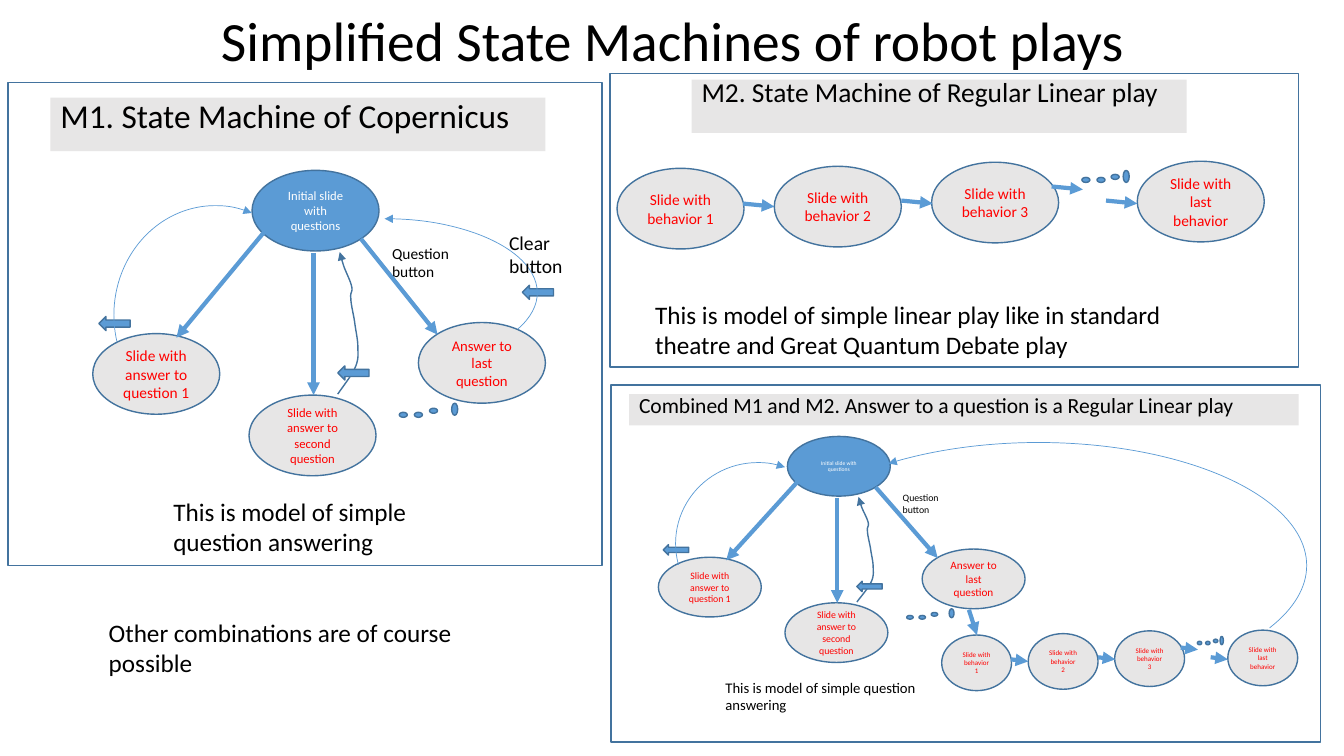
from collections import namedtuple
from dataclasses import dataclass

from pptx import Presentation
from pptx.dml.color import RGBColor
from pptx.enum import shapes, text
from pptx.oxml import parse_xml
from pptx.oxml.ns import nsdecls, qn
from pptx.util import Inches, Pt


@dataclass
class Theme:
    font: str = "Calibri"
    blue: str = "5B9BD5"
    edge: str = "43739E"
    gray: str = "E7E6E6"
    red: str = "FF0000"
    white: str = "FFFFFF"
    black: str = "000000"
    title: float = 39.6
    heads: tuple = (23.8, 19.6, 15.4)
    note: float = 18
    clear: float = 14
    big_star: tuple = (9, 11, 9, 10.5, 11, 18)
    small_star: tuple = (4, 7, 7, 8, 7, 10.5)
    big_play: float = 11
    small_play: float = 5


# A view moves point (x0, y0) to (x, y) and scales about it.
View = namedtuple("View", "x0 y0 x y kx ky")
PAGE = View(0, 0, 0, 0, 1, 1)
STAR = View(2.5, 1.69, 7.81, 4.33, 0.81, 0.74)
PLAY = View(6.12, 1.67, 9.34, 6.3, 0.55, 0.69)
KIND = shapes.MSO_SHAPE
ANCHOR = text.MSO_ANCHOR
theme = Theme()

prs = Presentation()
prs.slide_width, prs.slide_height = Inches(13.33), Inches(7.5)
slide = prs.slides.add_slide(prs.slide_layouts[5])


def put(view, kind, box, fill=None, edge=None, words="", size=0, ink=theme.black):
    """Add a shape, or a text box when kind is None, placed through a view."""
    x, y, w, h = box
    place = [Inches(n) for n in (view.x + (x - view.x0) * view.kx,
                                 view.y + (y - view.y0) * view.ky,
                                 w * view.kx, h * view.ky)]
    if kind is None:
        item = slide.shapes.add_textbox(*place)
    else:
        item = slide.shapes.add_shape(kind, *place)
        item.shadow.inherit = False
        item.fill.background()
        item.line.fill.background()
    if fill:
        item.fill.solid()
        item.fill.fore_color.rgb = RGBColor.from_string(fill)
    if edge:
        item.line.color.rgb = RGBColor.from_string(edge)
        item.line.width = Pt(1)
    if words:
        frame = item.text_frame
        frame.word_wrap = True
        oval = kind == KIND.OVAL
        frame.vertical_anchor = ANCHOR.MIDDLE if oval else ANCHOR.TOP
        para = frame.paragraphs[0]
        para.alignment = text.PP_ALIGN.CENTER if oval else text.PP_ALIGN.LEFT
        run = para.add_run()
        run.text = words
        run.font.name, run.font.size = theme.font, Pt(size)
        run.font.color.rgb = RGBColor.from_string(ink)
    return item


def stroke(item, color, width, end):
    """Style a line and put a triangle at its headEnd or tailEnd."""
    item.line.color.rgb = RGBColor.from_string(color)
    item.line.width = Pt(width)
    line = item.element.spPr.find(qn("a:ln"))
    line.append(parse_xml(f'<a:{end} {nsdecls("a")} type="triangle"/>'))


# Title
title = slide.shapes.title
title.left, title.top = Inches(0.92), Inches(0.09)
title.width, title.height = Inches(11.5), Inches(0.68)
title.text_frame.vertical_anchor = ANCHOR.MIDDLE
para = title.text_frame.paragraphs[0]
para.alignment, para.line_spacing = text.PP_ALIGN.CENTER, 0.9
run = para.add_run()
run.text = "Simplified State Machines of robot plays"
run.font.name, run.font.size = theme.font, Pt(theme.title)
run.font.color.rgb = RGBColor.from_string(theme.black)

# Panels with their headings
panels = [
    ((0.08, 0.82, 5.89, 4.79), (0.5, 0.97, 4.91, 0.53), 0.8,
     "M1. State Machine of Copernicus"),
    ((6.05, 0.73, 6.83, 2.91), (6.86, 0.79, 4.91, 0.53), 0.7,
     "M2. State Machine of Regular Linear play"),
    ((6.06, 3.82, 7.04, 3.54), (6.24, 3.91, 6.64, 0.31), 0.7,
     "Combined M1 and M2. Answer to a question is a Regular Linear play"),
]
for (panel, bar, gap, words), size in zip(panels, theme.heads):
    put(PAGE, KIND.RECTANGLE, panel, edge=theme.edge)
    head = put(PAGE, KIND.RECTANGLE, bar, theme.gray, words=words, size=size)
    para = head.text_frame.paragraphs[0]
    para.line_spacing, para.space_before = gap, Pt(10)

links = [(PAGE, (9.61, 6.05), (9.69, 6.3))]
arcs = [(PAGE, (2.3, 2.17, 3.03, 1.47), 162, False),
        (PAGE, (7.64, 4.39, 5.32, 2.44), 128.52, False)]
dots = []
marks = [(PAGE, 5.18, 2.83)]

# Question machines: full size, then inside the combined panel
nodes = [(2.5, 1.69, "Initial slide with questions"),
         (0.92, 3.31, "Slide with answer to question 1"),
         (2.47, 3.92, "Slide with answer to second question"),
         (4.15, 3.2, "Answer to last question")]
curve = [(3.35, 3.91), (3.42, 3.81), (3.5, 3.71), (3.53, 3.63),
         (3.56, 3.55), (3.55, 3.51), (3.55, 3.44),
         (3.55, 3.37), (3.53, 3.29), (3.52, 3.21),
         (3.51, 3.13), (3.48, 3.02), (3.48, 2.96),
         (3.47, 2.9), (3.5, 2.9), (3.49, 2.85),
         (3.48, 2.79), (3.43, 2.7), (3.41, 2.64),
         (3.39, 2.58), (3.37, 2.5), (3.37, 2.5)]
for view, sizes in ((PAGE, theme.big_star), (STAR, theme.small_star)):
    for i, (x, y, words) in enumerate(nodes):
        fill, ink = (theme.gray, theme.red) if i else (theme.blue, theme.white)
        put(view, KIND.OVAL, (x, y, 1.26, 0.8), fill, theme.edge, words, sizes[i], ink)
    put(view, None, (3.79, 2.37, 0.95, 0.47), words="Question button", size=sizes[4])
    put(view, None, (1.62, 4.87, 2.62, 0.71),
        words="This is model of simple question answering", size=sizes[5])
    links += [(view, (3.58, 2.37), (4.34, 3.32)),
              (view, (3.11, 2.51), (3.11, 3.92)),
              (view, (2.63, 2.29), (1.75, 3.35))]
    arcs.append((view, (1.13, 2.04, 2.01, 2.17), 150.18, True))
    marks += [(view, 3.35, 3.63), (view, 0.98, 3.14)]
    dots += [(view, 3.96, 4.09, 0.08, 0.05), (view, 4.11, 4.09, 0.08, 0.05),
             (view, 4.26, 4.05, 0.08, 0.05), (view, 4.48, 4, 0.06, 0.12)]

    # Return path, each cubic piece drawn in eight steps
    trail = []
    for k in range(0, len(curve) - 1, 3):
        for step in range(9):
            t = step / 8
            mix = ((1 - t) ** 3, 3 * t * (1 - t) ** 2, 3 * t * t * (1 - t), t ** 3)
            x, y = (sum(m * p[n] for m, p in zip(mix, curve[k:k + 4])) for n in (0, 1))
            trail.append((Inches(view.x + (x - view.x0) * view.kx),
                          Inches(view.y + (y - view.y0) * view.ky)))
    pen = slide.shapes.build_freeform(*trail[0])
    pen.add_line_segments(trail[1:], close=False)
    back = pen.convert_to_shape()
    back.shadow.inherit = False
    back.fill.background()
    stroke(back, theme.edge, 1, "tailEnd")

# Linear plays: full size, then inside the combined panel
stops = [(6.12, 1.67, "behavior 1"), (7.68, 1.65, "behavior 2"),
         (9.24, 1.61, "behavior 3"), (11.28, 1.6, "last behavior")]
for view, size in ((PAGE, theme.big_play), (PLAY, theme.small_play)):
    for x, y, name in stops:
        put(view, KIND.OVAL, (x, y, 1.26, 0.8), theme.gray, theme.edge,
            "Slide with " + name, size, theme.red)
    for x, y in ((7.37, 2.02), (8.94, 1.99), (10.43, 1.85), (10.97, 1.99)):
        links.append((view, (x, y), (x + 0.31, y + 0.03)))
    dots += [(view, 10.73, 1.76, 0.08, 0.05), (view, 10.88, 1.76, 0.08, 0.05),
             (view, 11.02, 1.73, 0.08, 0.05), (view, 11.14, 1.69, 0.06, 0.12)]

for view, *box in dots:
    put(view, KIND.OVAL, box, theme.blue, theme.edge)

for view, x, y in marks:
    mark = put(view, KIND.RIGHT_ARROW, (x, y, 0.31, 0.14), theme.blue, theme.edge)
    mark.rotation = 180

for view, box, start, flip in arcs:
    arc = put(view, KIND.ARC, box)
    arc.adjustments[0], arc.adjustments[1] = start, 9.07
    stroke(arc, theme.blue, 0.5, "headEnd")
    if flip:
        arc.element.spPr.find(qn("a:xfrm")).set("flipH", "1")

for view, *ends in links:
    place = [Inches(n) for x, y in ends
             for n in (view.x + (x - view.x0) * view.kx,
                       view.y + (y - view.y0) * view.ky)]
    link = slide.shapes.add_connector(shapes.MSO_CONNECTOR.STRAIGHT, *place)
    stroke(link, theme.blue, 3, "tailEnd")
    link.element.spPr.append(parse_xml(f'<a:effectLst {nsdecls("a")}/>'))

# Remaining labels
labels = [
    ((4.95, 2.24, 0.95, 0.57), theme.clear, "Clear button"),
    ((6.4, 2.92, 5.42, 0.71), theme.note, "This is model of simple linear play like in "
     "standard theatre and Great Quantum Debate play"),
    ((0.98, 6.07, 3.74, 0.71), theme.note, "Other combinations are of course possible"),
]
for box, size, words in labels:
    put(PAGE, None, box, words=words, size=size)

prs.save("out.pptx")
